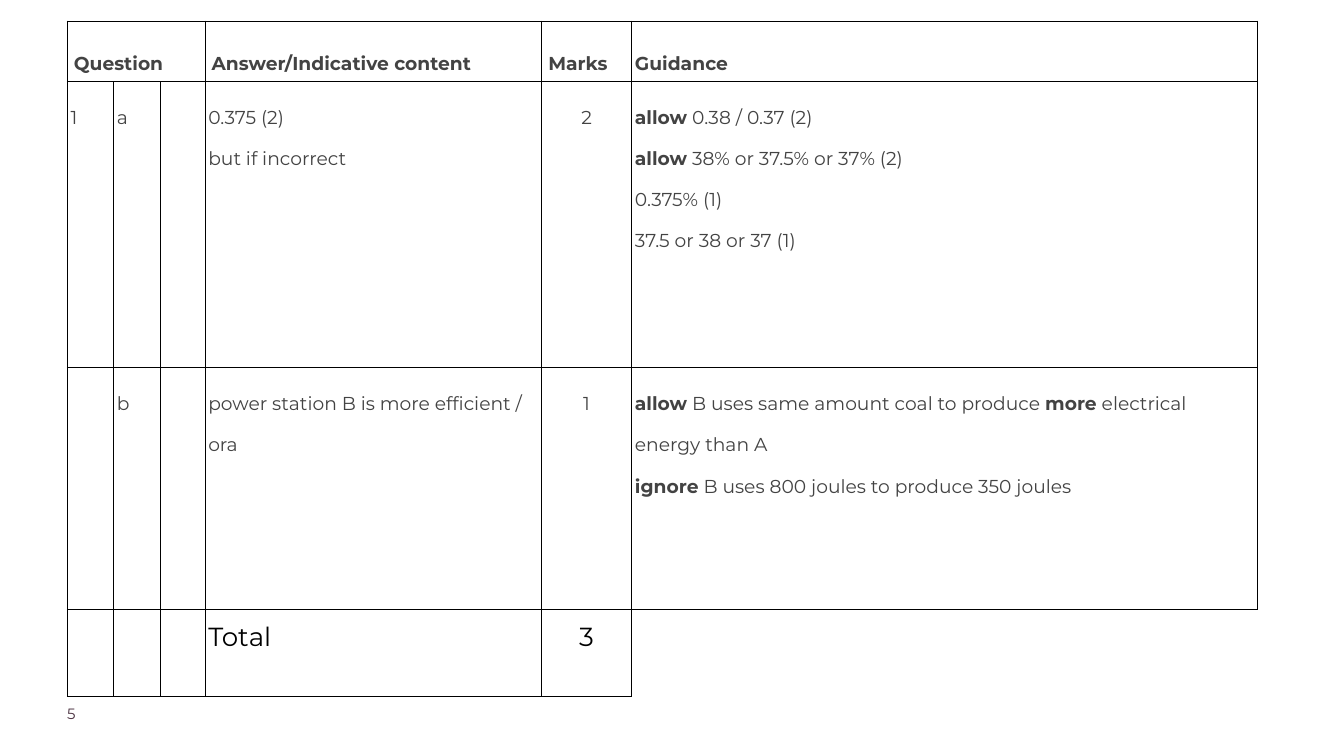
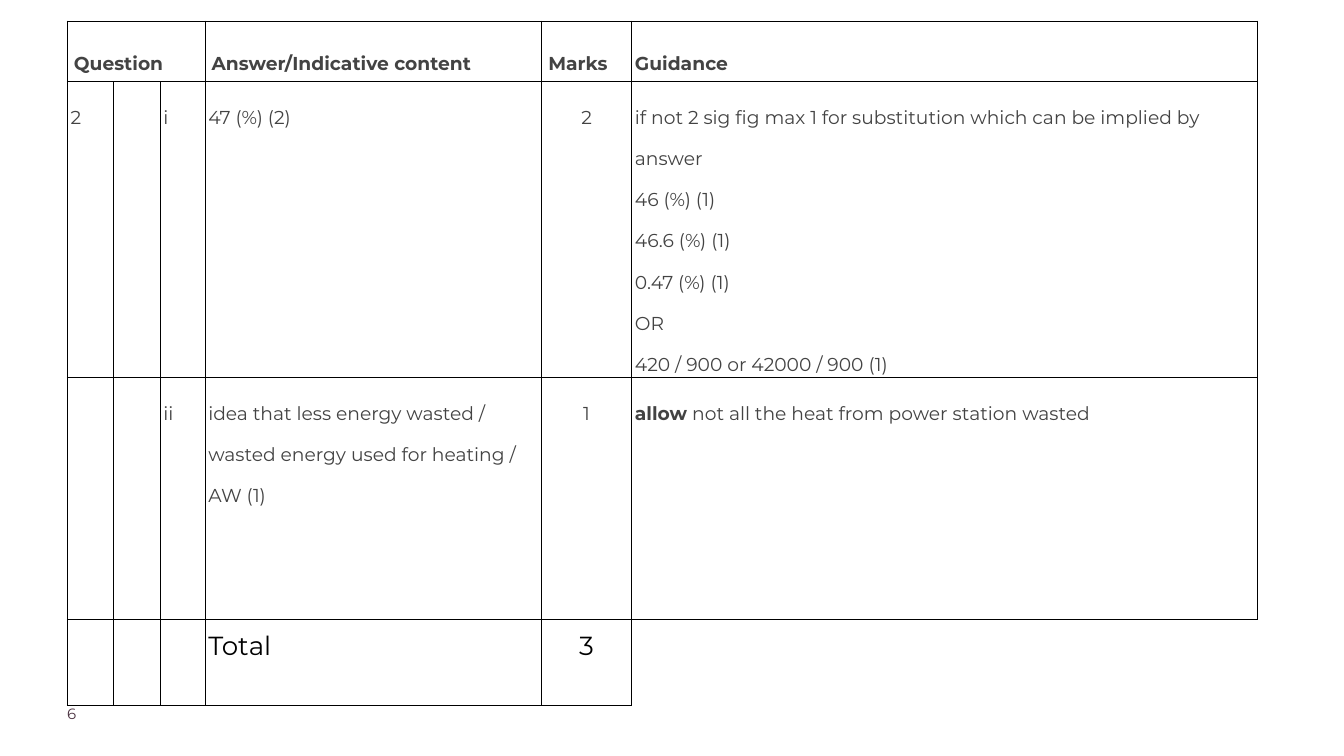
"""Build two mark-scheme slides, each a bordered answer table with a page number."""
from dataclasses import dataclass
from pptx import Presentation
from pptx.dml.color import RGBColor
from pptx.enum import text as tx
from pptx.oxml import parse_xml
from pptx.oxml.ns import nsdecls
from pptx.util import Inches, Pt


@dataclass(frozen=True)
class Theme:
    font: str = "Montserrat"
    body: str = "434343"
    total: str = "000000"
    page: str = "4B3241"
    line: str = "000000"
    fill: str = "FFFFFF"
    body_size: int = 20
    total_size: int = 28
    page_size: int = 16
    line_width: float = 0.75


COLS = [0.69, 0.69, 0.67, 5.01, 1.34, 9.31]
ROWS = [0.66, 4.26, 3.6, 1.29]
HEAD = ["Question", "", "", "Answer/Indicative content", "Marks", "Guidance"]
TOTAL = ["", "", "", "Total", "3", ""]
MARKS, GUIDE = 4, 5

SCHEMES = [
    (5, [
        ["1", "a", "", "0.375 (2)\nbut if incorrect", "2",
         "**allow** 0.38 / 0.37 (2)\n"
         "**allow** 38% or 37.5% or 37% (2)\n"
         "0.375% (1)\n"
         "37.5 or 38 or 37 (1)"],
        ["", "b", "", "power station B is more efficient / ora", "1",
         "**allow** B uses same amount coal to produce **more** electrical energy than A\n"
         "**ignore** B uses 800 joules to produce 350 joules"],
    ]),
    (6, [
        ["2", "", "i", "47 (%) (2)", "2",
         "if not 2 sig fig max 1 for substitution which can be implied by answer\n"
         "46 (%) (1)\n46.6 (%) (1)\n0.47 (%) (1)\nOR\n"
         "420 / 900 or 42000 / 900 (1)"],
        ["", "", "ii",
         "idea that less energy wasted / wasted energy used for heating / AW (1)", "1",
         "**allow** not all the heat from power station wasted"],
    ]),
]


class Deck:
    def __init__(self, theme):
        self.theme = theme
        self.prs = Presentation()
        self.prs.slide_width = Inches(20)
        self.prs.slide_height = Inches(11.25)
        self.slide = None

    def add(self):
        self.slide = self.prs.slides.add_slide(self.prs.slide_layouts[6])

    def style(self, font, size, color, bold=False):
        font.name = self.theme.font
        font.size = Pt(size)
        font.bold = bold
        font.color.rgb = RGBColor.from_string(color)

    def page(self, num):
        box = self.slide.shapes.add_textbox(Inches(1), Inches(10.48), Inches(1.57), Inches(0.39))
        frame = box.text_frame
        frame.word_wrap = True
        frame.margin_left = frame.margin_right = frame.margin_top = frame.margin_bottom = 0
        frame.text = str(num)
        self.style(frame.paragraphs[0].runs[0].font, self.theme.page_size, self.theme.page)

    def border(self, cell, sides):
        props = cell._tc.get_or_add_tcPr()
        for side in "LRTB":
            paint = "<a:noFill/>"
            if side in sides:
                paint = f'<a:solidFill><a:srgbClr val="{self.theme.line}"/></a:solidFill>'
            width = Pt(self.theme.line_width)
            props.append(parse_xml(f'<a:ln{side} {nsdecls("a")} w="{width}">{paint}</a:ln{side}>'))

    def label(self, cell, words, size, color, space, align, bold):
        frame = cell.text_frame
        for i, line in enumerate(words.split("\n")):
            para = frame.add_paragraph() if i else frame.paragraphs[0]
            para.alignment = align
            para.line_spacing = space
            for j, part in enumerate(line.split("**")):
                if part:
                    run = para.add_run()
                    run.text = part
                    self.style(run.font, size, color, bold or j % 2 == 1)

    def table(self, rows):
        t = self.theme
        grid = self.slide.shapes.add_table(
            len(rows), len(COLS), Inches(1), Inches(0.31),
            Inches(sum(COLS)), Inches(sum(ROWS))).table
        grid.first_row = grid.horz_banding = False
        for col, width in zip(grid.columns, COLS):
            col.width = Inches(width)
        for row, height in zip(grid.rows, ROWS):
            row.height = Inches(height)
        last = len(rows) - 1
        for r, row in enumerate(rows):
            head, total = r == 0, r == last
            size, color = (t.total_size, t.total) if total else (t.body_size, t.body)
            space = 2.1 if head else 1.15 if total else 1.8
            for c, words in enumerate(row):
                cell = grid.cell(r, c)
                wide = c == MARKS or head and c != GUIDE
                cell.margin_left = Inches(0.1 if wide else 0.05)
                cell.margin_right = cell.margin_top = cell.margin_bottom = Inches(0.1)
                self.border(cell, "LT" if total and c == GUIDE else "LRTB")
                cell.fill.solid()
                cell.fill.fore_color.rgb = RGBColor.from_string(t.fill)
                mid = c == MARKS and not head
                align = tx.PP_ALIGN.CENTER if mid else tx.PP_ALIGN.LEFT
                if words:
                    self.label(cell, words, size, color, space, align, head)
        grid.cell(0, 0).merge(grid.cell(0, 2))


def main():
    deck = Deck(Theme())
    for num, answers in SCHEMES:
        deck.add()
        deck.page(num)
        deck.table([HEAD, *answers, TOTAL])
    deck.prs.save("out.pptx")


if __name__ == "__main__":
    main()
